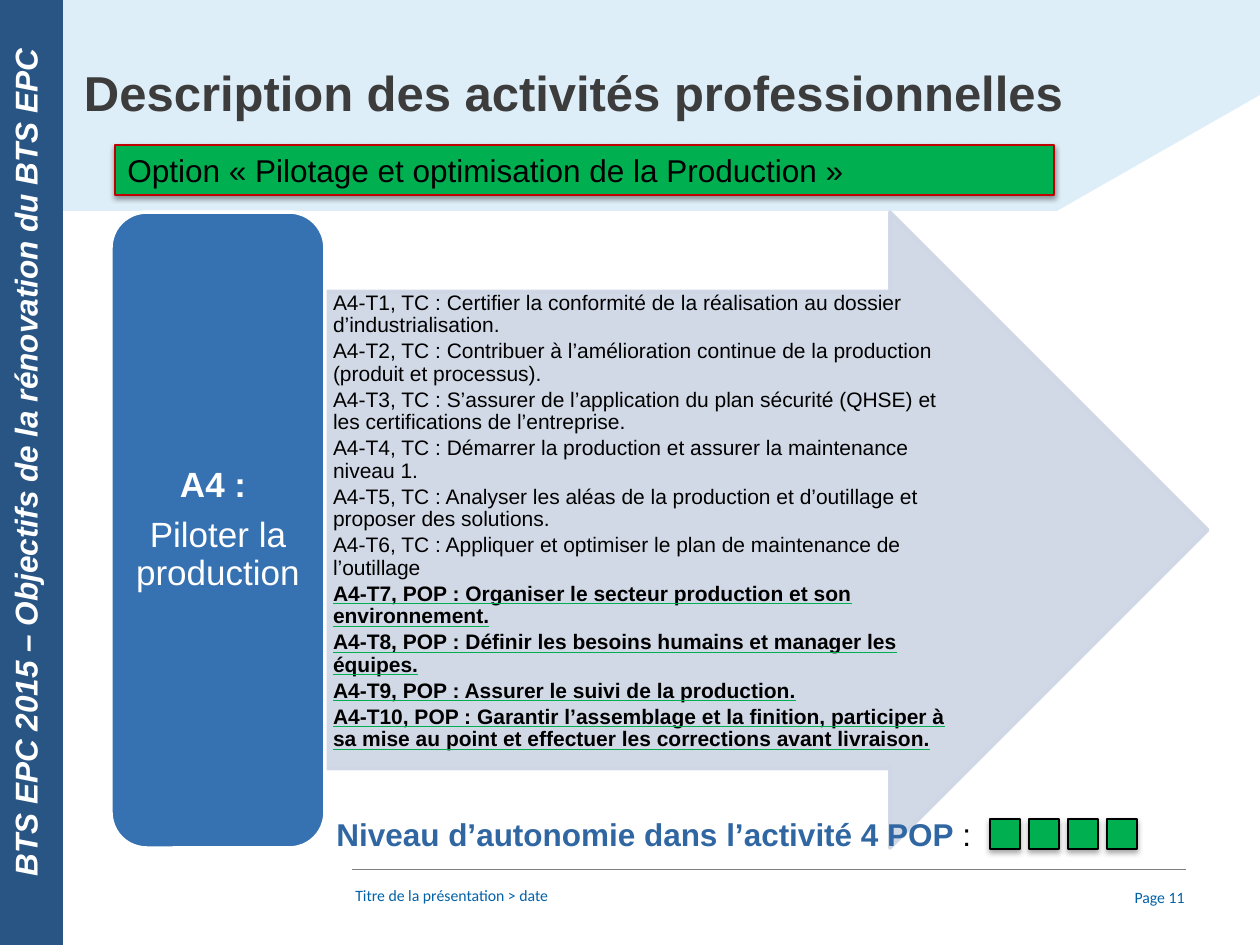
import pptx
import pptx.dml.color
import pptx.enum.shapes
import pptx.enum.text
import pptx.oxml
import pptx.oxml.ns
import pptx.util
from lxml import etree

PX = 914400 / 126
SHAPE = pptx.enum.shapes.MSO_SHAPE
ALIGN = pptx.enum.text.PP_ALIGN
ANCHOR = pptx.enum.text.MSO_ANCHOR
qn = pptx.oxml.ns.qn

GREEN = "00B050"
BLACK = "000000"
WHITE = "FFFFFF"
FOOTER_BLUE = "0062A8"
ARROW_GREY = "CED5E4"

COMMON_TASKS = [
    "A4-T1, TC : Certifier la conformité de la réalisation au dossier d’industrialisation.",
    "A4-T2, TC : Contribuer à l’amélioration continue de la production (produit et processus).",
    "A4-T3, TC : S’assurer de l’application du plan sécurité (QHSE) et les certifications de l’entreprise.",
    "A4-T4, TC : Démarrer la production et assurer la maintenance niveau 1.",
    "A4-T5, TC : Analyser les aléas de la production et d’outillage et proposer des solutions.",
    "A4-T6, TC : Appliquer et optimiser le plan de maintenance de l’outillage",
]
OPTION_TASKS = [
    "A4-T7, POP : Organiser le secteur production et son environnement.",
    "A4-T8, POP : Définir les besoins humains et manager les équipes.",
    "A4-T9, POP : Assurer le suivi de la production.",
    "A4-T10, POP : Garantir l’assemblage et la finition, participer à sa mise au point "
    "et effectuer les corrections avant livraison.",
]


def px(length):
    return pptx.util.Emu(round(length * PX))


def rgb(color):
    return pptx.dml.color.RGBColor.from_string(color)


def add_alpha(shape, percent):
    """Make the fill and the line of a shape partly transparent."""
    for color in shape.element.spPr.iter(qn("a:srgbClr")):
        etree.SubElement(color, qn("a:alpha"), val=str(percent * 1000))


def add_shadow(shape, alpha, distance):
    """Add a soft shadow straight below a shape; distance is in points."""
    effects = shape.element.spPr.find(qn("a:effectLst"))
    shadow = etree.SubElement(effects, qn("a:outerShdw"), blurRad="40000",
                              dist=str(pptx.util.Pt(distance)), dir="5400000", rotWithShape="0")
    color = etree.SubElement(shadow, qn("a:srgbClr"), val=BLACK)
    etree.SubElement(color, qn("a:alpha"), val=str(alpha * 1000))


def underline(run, color):
    run.font.underline = True
    fill = pptx.oxml.parse_xml(
        f'<a:uFill {pptx.oxml.ns.nsdecls("a")}><a:solidFill>'
        f'<a:srgbClr val="{color}"/></a:solidFill></a:uFill>')
    run._r.rPr.find(qn("a:latin")).addprevious(fill)


class SlideBuilder:
    """Holds the text style and the current slide."""

    font_name = "Arial"

    def __init__(self, slide):
        self.slide = slide

    def style_run(self, run, size, color, bold=False, italic=False, font=None):
        run.font.name = font or self.font_name
        run.font.size = pptx.util.Pt(size)
        run.font.bold = bold
        run.font.italic = italic
        run.font.color.rgb = rgb(color)

    def set_text(self, item, lines, size, color, align=ALIGN.LEFT, **style):
        frame = item.text_frame
        frame.word_wrap = True
        frame.text = "\n".join(lines)
        for para in frame.paragraphs:
            para.alignment = align
            for run in para.runs:
                self.style_run(run, size, color, **style)
        return frame

    def placeholder(self, index, left, top, width, height, margin):
        """Move a placeholder to its place and in front of what is drawn so far."""
        item = self.slide.placeholders[index]
        item.left, item.top, item.width, item.height = map(px, (left, top, width, height))
        item.element.getparent().append(item.element)
        frame = item.text_frame
        frame.auto_size = pptx.enum.text.MSO_AUTO_SIZE.NONE
        frame.margin_left = frame.margin_right = px(margin)
        frame.margin_top = frame.margin_bottom = px(margin)
        return item

    def box(self, left, top, width, height):
        return self.slide.shapes.add_textbox(*map(px, (left, top, width, height)))

    def paint(self, shape, fill, line=None, line_width=0.75):
        shape.shadow.inherit = False
        shape.fill.solid()
        shape.fill.fore_color.rgb = rgb(fill)
        if line:
            shape.line.color.rgb = rgb(line)
            shape.line.width = pptx.util.Pt(line_width)
        else:
            shape.line.fill.background()
        return shape

    def shape(self, kind, left, top, width, height, *paint):
        shape = self.slide.shapes.add_shape(kind, *map(px, (left, top, width, height)))
        return self.paint(shape, *paint)

    def outline(self, points, fill):
        builder = self.slide.shapes.build_freeform(*points[0], scale=PX)
        builder.add_line_segments(points[1:], close=True)
        return self.paint(builder.convert_to_shape(), fill)

    def rule(self, left, right, y, color, width):
        line = self.slide.shapes.add_connector(
            pptx.enum.shapes.MSO_CONNECTOR.STRAIGHT, px(left), px(y), px(right), px(y))
        line.line.color.rgb = rgb(color)
        line.line.width = pptx.util.Pt(width)
        etree.SubElement(line.element.spPr, qn("a:effectLst"))


def add_frame(page):
    page.outline([(1260, 0), (0, 0), (0, 211), (1057, 211), (1260, 95)], "DEEEF8")
    page.rule(352, 1186, 869, "7F7F7F", 0.5)
    footer = page.box(343, 880, 745, 32)
    page.set_text(footer, ["Titre de la présentation > date"], 9, FOOTER_BLUE, font="Calibri")
    number = page.box(1086, 876, 111, 43)
    frame = page.set_text(number, ["Page 11"], 9, FOOTER_BLUE, ALIGN.RIGHT, font="Calibri")
    frame.vertical_anchor = ANCHOR.MIDDLE
    title = page.placeholder(0, 84, 37, 1134, 110, 0)
    frame = page.set_text(title, ["Description des activités professionnelles"], 28, "3C3C3C", bold=True)
    frame.vertical_anchor = ANCHOR.MIDDLE


def add_tasks(page):
    arrow = page.shape(SHAPE.RIGHT_ARROW, 316, 212, 892, 636, ARROW_GREY, ARROW_GREY, 2)
    arrow.adjustments[0] = 0.75
    arrow.adjustments[1] = 0.5
    add_alpha(arrow, 90)
    tasks = page.placeholder(1, 316, 291, 654, 478, 1)
    frame = page.set_text(tasks, COMMON_TASKS + OPTION_TASKS, 12, BLACK)
    frame.vertical_anchor = ANCHOR.TOP
    for para in frame.paragraphs:
        properties = para._p.get_or_add_pPr()
        properties.set("marL", str(px(16)))
        properties.set("indent", "0")
        etree.SubElement(properties, qn("a:buNone"))
        para.line_spacing = 0.9
        para.space_before = pptx.util.Pt(0)
        para.space_after = pptx.util.Pt(1.8)
    for para in frame.paragraphs[len(COMMON_TASKS):]:
        for run in para.runs:
            run.font.bold = True
            underline(run, GREEN)


def add_activity(page):
    activity = page.shape(SHAPE.ROUNDED_RECTANGLE, 111, 212, 214, 636, "3671B2", WHITE, 2)
    frame = page.set_text(activity, ["A4 : ", "Piloter la production"], 20, WHITE, ALIGN.CENTER)
    frame.margin_left = frame.margin_right = px(10)
    frame.margin_top = frame.margin_bottom = px(5)
    for para in frame.paragraphs:
        para.line_spacing = 0.9
        para.space_after = pptx.util.Pt(7)
    frame.paragraphs[0].runs[0].font.bold = True


def add_labels(page):
    band = page.shape(SHAPE.RECTANGLE, 0, 0, 63, 945, "295585")
    frame = page.set_text(band, ["BTS EPC 2015 – Objectifs de la rénovation du BTS EPC"],
                          18, WHITE, bold=True, italic=True)
    frame.vertical_anchor = ANCHOR.TOP
    frame._txBody.bodyPr.set("vert", "vert270")
    frame.paragraphs[0]._p.get_or_add_pPr().set("marL", str(px(56)))

    option = page.shape(SHAPE.RECTANGLE, 115, 145, 939, 50, GREEN, "C00000")
    add_shadow(option, 38, 1.6)
    page.set_text(option, ["Option « Pilotage et optimisation de la Production »"], 18, BLACK)

    level = page.box(324, 809, 755, 50)
    frame = page.set_text(level, ["Niveau d’autonomie dans l’activité 4 POP "], 18, "3066A1", bold=True)
    colon = frame.paragraphs[0].add_run()
    colon.text = ":"
    page.style_run(colon, 18, BLACK)
    for step in range(4):
        square = page.shape(SHAPE.RECTANGLE, 990 + 39 * step, 819, 30, 30, GREEN, BLACK)
        add_shadow(square, 35, 1.8)


def main():
    deck = pptx.Presentation()
    deck.slide_width, deck.slide_height = px(1260), px(945)
    page = SlideBuilder(deck.slides.add_slide(deck.slide_layouts[1]))
    add_frame(page)
    add_tasks(page)
    add_activity(page)
    add_labels(page)
    deck.save("out.pptx")


if __name__ == "__main__":
    main()
